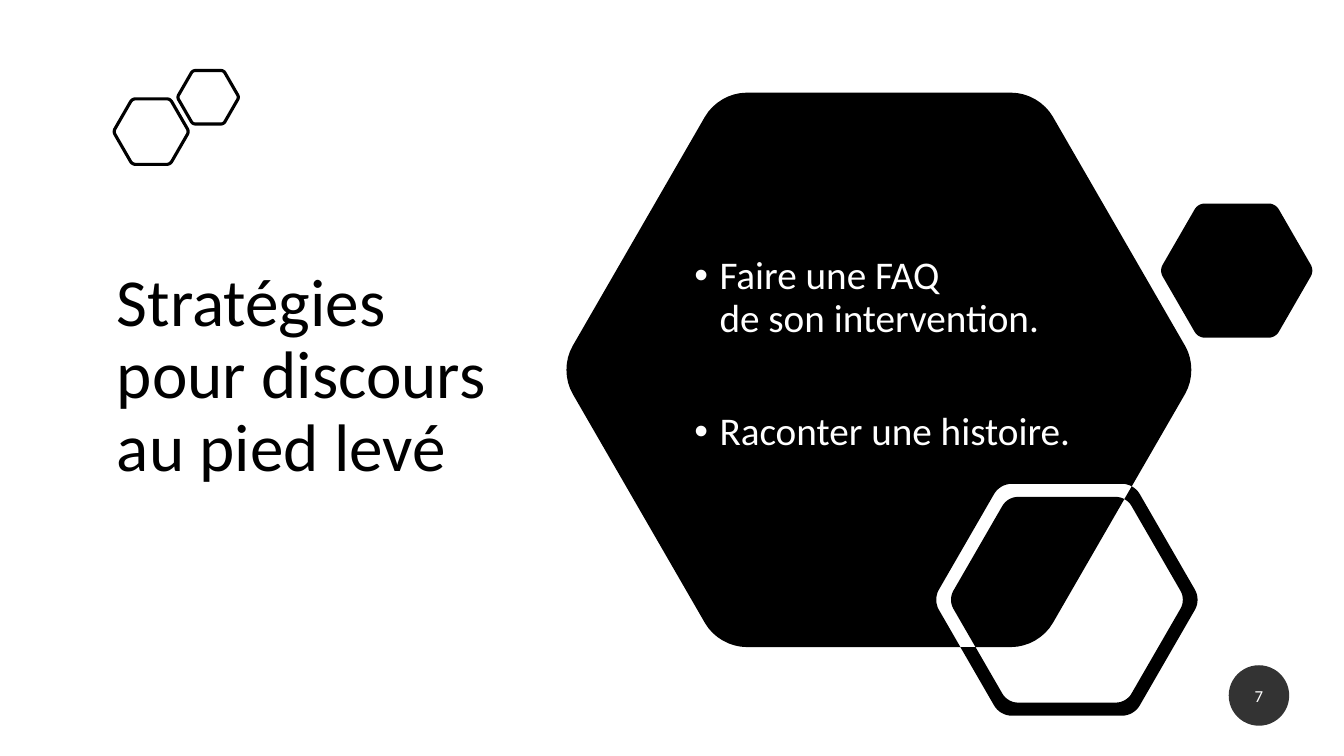
from math import cos, pi, sin, sqrt

from lxml.etree import SubElement
from pptx import Presentation
from pptx.dml.color import RGBColor
from pptx.enum.shapes import MSO_SHAPE as Shape
from pptx.enum.text import MSO_ANCHOR as Anchor, PP_ALIGN as Align
from pptx.oxml.ns import qn
from pptx.util import Pt

COLORS = {"ink": "000000", "paper": "FFFFFF"}
FONT = "Calibri"
CORNER_CUT = 0.05  # rounded length of each edge end, as a share of the height
CURVE_STEPS = 8


def rgb(name):
    return RGBColor.from_string(COLORS[name])


def format_text(paragraph, size, color, **layout):
    for name, value in layout.items():
        setattr(paragraph, name, value)
    font_values = {"name": FONT, "size": Pt(size), "bold": False}
    for run in paragraph.runs:
        for name, value in font_values.items():
            setattr(run.font, name, value)
        run.font.color.rgb = rgb(color)


def place(shape, box):
    for name, value in zip(("left", "top", "width", "height"), box):
        setattr(shape, name, Pt(value))


def hexagon_points(center_x, center_y, height):
    """Outline of a regular hexagon with flat top and rounded corners."""
    side = height / sqrt(3)
    corners = [(center_x + side * cos(i * pi / 3), center_y + side * sin(i * pi / 3))
               for i in range(6)]

    def toward(corner, neighbour, length):
        return [a + (b - a) * length / side for a, b in zip(corner, neighbour)]

    points = []
    cut = height * CORNER_CUT
    for i, corner in enumerate(corners):
        before, after = corners[i - 1], corners[(i + 1) % 6]
        curve = [toward(corner, before, cut), toward(corner, before, cut * 0.4),
                 toward(corner, after, cut * 0.4), toward(corner, after, cut)]
        for step in range(CURVE_STEPS + 1):
            t = step / CURVE_STEPS
            weights = ((1 - t) ** 3, 3 * t * (1 - t) ** 2, 3 * t * t * (1 - t), t ** 3)
            points.append(tuple(Pt(sum(w * p[axis] for w, p in zip(weights, curve)))
                                for axis in (0, 1)))
    return points


def add_hexagons(slide, hexagons):
    """One shape from several hexagons; overlaps invert the fill."""
    outlines = [hexagon_points(*hexagon) for hexagon in hexagons]
    builder = slide.shapes.build_freeform(*outlines[0][0])
    for index, outline in enumerate(outlines):
        if index:
            builder.move_to(*outline[0])
        builder.add_line_segments(outline[1:], close=True)
    shape = builder.convert_to_shape()
    shape.shadow.inherit = False
    return shape


def add_title(slide, box, text):
    title = slide.shapes.title
    place(title, box)
    frame = title.text_frame
    frame.text = text
    frame.word_wrap = True
    frame.vertical_anchor = Anchor.MIDDLE
    format_text(frame.paragraphs[0], 48, "ink", alignment=Align.LEFT, line_spacing=0.9)


def add_outline_pair(slide, left, top):
    for x, y, height in ((27, 43.5, 46.8), (67.7, 19, 38.2)):
        shape = add_hexagons(slide, [(left + x, top + y, height)])
        shape.fill.background()
        shape.line.color.rgb = rgb("ink")
        shape.line.width = Pt(2.25)


def add_hexagon_cluster(slide, left, top):
    large, small = (223.8, 198, 396), (479.4, 127.1, 95.8)
    ring = [(358.1, 362.2, height) for height in (165.6, 146.9)]
    shape = add_hexagons(slide, [(left + x, top + y, height)
                                 for x, y, height in (large, small, *ring)])
    shape.fill.solid()
    shape.fill.fore_color.rgb = rgb("ink")
    shape.line.fill.background()


def add_strategies(slide, box, items):
    frame = slide.shapes.add_textbox(*map(Pt, box)).text_frame
    frame.word_wrap = True
    frame.vertical_anchor = Anchor.MIDDLE
    frame.margin_bottom = Pt(35.6)
    for index, item in enumerate(items):
        paragraph = frame.add_paragraph() if index else frame.paragraphs[0]
        paragraph.text = item
        # Hanging bullet
        properties = paragraph._p.get_or_add_pPr()
        properties.set("marL", str(Pt(18)))
        properties.set("indent", str(-Pt(18)))
        SubElement(properties, qn("a:buFont"), typeface="Arial")
        SubElement(properties, qn("a:buChar"), char="•")
        format_text(paragraph, 28, "paper", alignment=Align.LEFT, line_spacing=0.9,
                    space_before=Pt(50.7 if index else 0))


def add_page_number(slide, box, number):
    badge = slide.shapes.add_shape(Shape.OVAL, *map(Pt, box))
    badge.shadow.inherit = False
    badge.fill.solid()
    badge.fill.fore_color.rgb = rgb("ink")
    color = badge.fill._xPr.find(qn("a:solidFill"))[0]
    SubElement(color, qn("a:alpha"), val="80000")
    badge.line.fill.background()
    frame = badge.text_frame
    frame.text = number
    frame.vertical_anchor = Anchor.MIDDLE
    for side in ("left", "top", "right", "bottom"):
        setattr(frame, f"margin_{side}", 0)
    format_text(frame.paragraphs[0], 12, "paper", alignment=Align.CENTER,
                space_after=Pt(6))


def build_strategy_slide(presentation):
    title_only = presentation.slide_layouts[5]
    slide = presentation.slides.add_slide(title_only)
    slide.background.fill.solid()
    slide.background.fill.fore_color.rgb = rgb("paper")
    add_title(slide, (76.3, 123.1, 292.3, 292.3), "Stratégies pour discours au pied levé")
    add_outline_pair(slide, 81, 50.5)
    add_hexagon_cluster(slide, 404, 66.2)
    add_strategies(slide, (488.9, 164.9, 306.7, 209.5),
                   ("Faire une FAQ\vde son intervention.", "Raconter une histoire."))
    add_page_number(slide, (877.7, 475.2, 43.2, 43.2), "7")


def main():
    presentation = Presentation()
    presentation.slide_width, presentation.slide_height = Pt(960), Pt(540)
    build_strategy_slide(presentation)
    presentation.save("out.pptx")


if __name__ == "__main__":
    main()
